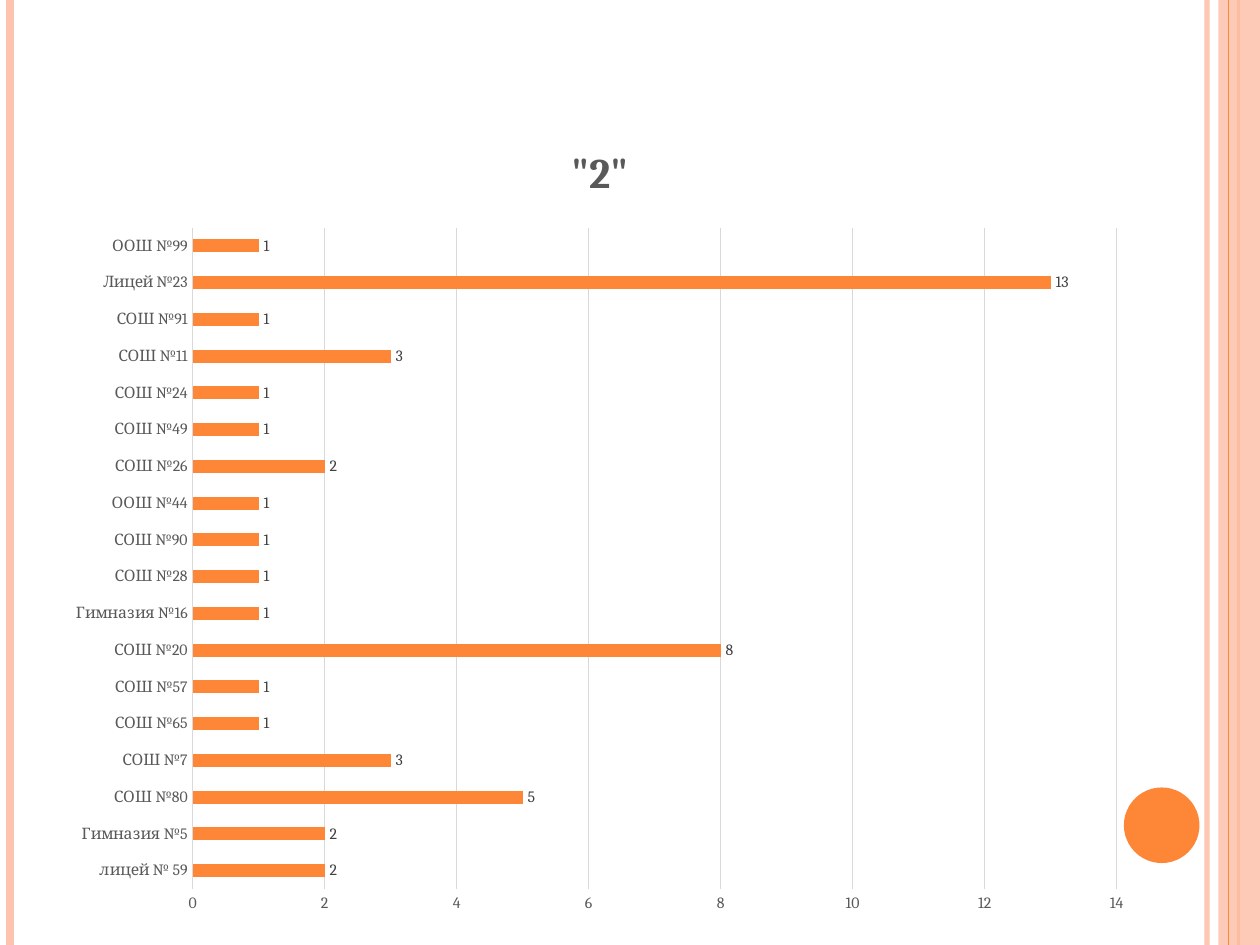
from lxml import etree
from pptx import Presentation
from pptx.chart.data import CategoryChartData
from pptx.dml.color import RGBColor
from pptx.enum.chart import XL_CHART_TYPE, XL_LABEL_POSITION, XL_TICK_MARK
from pptx.enum.shapes import MSO_CONNECTOR, MSO_SHAPE as Shape
from pptx.oxml.ns import qn
from pptx.util import Inches, Pt

ORANGE, PEACH, GRID = "FE8637", "FEC3AE", "D9D9D9"
AXIS_TEXT, LABEL_TEXT = "595959", "404040"

SCHOOLS = [
    ("лицей № 59", 2), ("Гимназия №5", 2), ("СОШ №80", 5), ("СОШ №7", 3),
    ("СОШ №65", 1), ("СОШ №57", 1), ("СОШ №20", 8), ("Гимназия №16", 1),
    ("СОШ №28", 1), ("СОШ №90", 1), ("ООШ №44", 1), ("СОШ №26", 2),
    ("СОШ №49", 1), ("СОШ №24", 1), ("СОШ №11", 3), ("СОШ №91", 1),
    ("Лицей №23", 13), ("ООШ №99", 1),
]


def paint(color_format, color):
    color_format.rgb = RGBColor.from_string(color)


def set_opacity(properties, percent):
    color = properties.find(".//" + qn("a:srgbClr"))
    etree.SubElement(color, qn("a:alpha"), val=str(percent * 1000))


def set_font(font, color, **formats):
    for name, value in {"name": "Cambria", "bold": False, **formats}.items():
        setattr(font, name, value)
    paint(font.color, color)


def add_stripe(slide, x, color, width, opacity=100):
    stripe = slide.shapes.add_connector(
        MSO_CONNECTOR.STRAIGHT, Inches(x), 0, Inches(x), Inches(7.5))
    paint(stripe.line.color, color)
    stripe.line.width = Pt(width)
    properties = stripe._element.spPr
    etree.SubElement(properties, qn("a:effectLst"))
    if opacity < 100:
        set_opacity(properties, opacity)


def add_block(slide, preset, box, color, opacity=100):
    block = slide.shapes.add_shape(preset, *map(Inches, box))
    block.shadow.inherit = False
    block.fill.solid()
    paint(block.fill.fore_color, color)
    block.line.fill.background()
    if opacity < 100:
        set_opacity(block._element.spPr, opacity)


def format_line(line, color):
    paint(line.color, color)
    line.width = Pt(0.75)


def format_axis(axis, **formats):
    ticks = {"major_tick_mark": XL_TICK_MARK.NONE,
             "minor_tick_mark": XL_TICK_MARK.NONE}
    for name, value in {**ticks, **formats}.items():
        setattr(axis, name, value)
    set_font(axis.tick_labels.font, AXIS_TEXT, size=Pt(9))


def add_school_chart(slide):
    school_data = CategoryChartData()
    school_data.categories = [school for school, _ in SCHOOLS]
    school_data.add_series('"2"', [count for _, count in SCHOOLS])
    chart = slide.shapes.add_chart(
        XL_CHART_TYPE.BAR_CLUSTERED,
        *map(Inches, (0.43, 0.91, 8.66, 6.46)), school_data).chart
    set_font(chart.font, "000000", size=Pt(10))
    chart.has_legend = False

    # Chart title
    heading = chart.chart_title.text_frame
    heading.text = '"2"'
    set_font(heading.paragraphs[0].runs[0].font, AXIS_TEXT,
             size=Pt(24), bold=True)

    # Axes and grid
    schools, counts = chart.category_axis, chart.value_axis
    format_axis(schools, has_major_gridlines=False)
    format_line(schools.format.line, GRID)
    format_axis(counts, has_major_gridlines=True, minimum_scale=0,
                maximum_scale=14, major_unit=2)
    counts.format.line.fill.background()
    format_line(counts.major_gridlines.format.line, GRID)

    # Bars and their values
    plot = chart.plots[0]
    plot.gap_width = 182
    plot.vary_by_categories = False
    bars = plot.series[0]
    bars.format.fill.solid()
    paint(bars.format.fill.fore_color, ORANGE)
    labels = bars.data_labels
    labels.show_value = True
    labels.position = XL_LABEL_POSITION.OUTSIDE_END
    set_font(labels.font, LABEL_TEXT, size=Pt(9))


def main():
    deck = Presentation()
    deck.slide_width, deck.slide_height = Inches(10), Inches(7.5)
    slide = deck.slides.add_slide(deck.slide_layouts[6])

    # Side stripes and circle
    add_stripe(slide, 9.58, PEACH, 3, opacity=93)
    add_stripe(slide, 0.08, PEACH, 4.5)
    add_stripe(slide, 9.83, ORANGE, 1.5)
    add_block(slide, Shape.RECTANGLE, (9.67, 0, 0.33, 7.5), PEACH, opacity=87)
    add_stripe(slide, 9.75, ORANGE, 0.75)
    add_block(slide, Shape.OVAL, (8.92, 6.25, 0.6, 0.6), ORANGE)

    add_school_chart(slide)
    deck.save("out.pptx")


if __name__ == "__main__":
    main()
